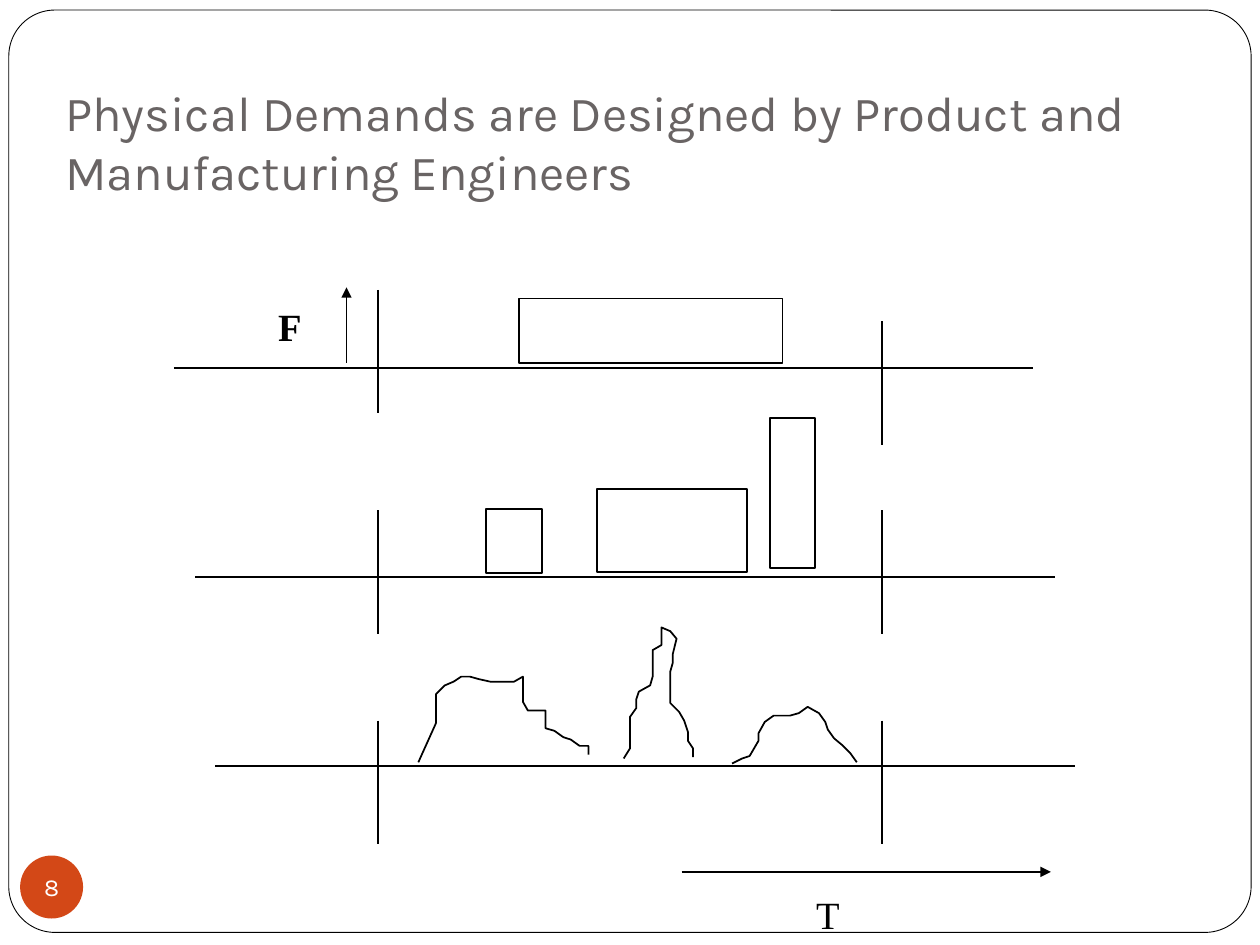
from lxml import etree
from pptx import Presentation
from pptx.dml.color import RGBColor
from pptx.enum.shapes import MSO_CONNECTOR, MSO_SHAPE
from pptx.enum.text import MSO_ANCHOR, PP_ALIGN
from pptx.oxml.ns import qn
from pptx.util import Pt

PX = 9144  # 100 px to the inch
LINE = MSO_CONNECTOR.STRAIGHT
RECT = MSO_SHAPE.RECTANGLE
ROUND = MSO_SHAPE.ROUNDED_RECTANGLE
OVAL = MSO_SHAPE.OVAL
TOP, MIDDLE, BOTTOM = MSO_ANCHOR.TOP, MSO_ANCHOR.MIDDLE, MSO_ANCHOR.BOTTOM
CENTER = PP_ALIGN.CENTER
BLACK, WHITE, GRAY, RUST = "000000", "FFFFFF", "696464", "D34817"


def rgb(code):
    return RGBColor.from_string(code)


def put_text(shape, text, size, font, color, anchor=TOP, bold=False):
    frame = shape.text_frame
    frame.word_wrap = True
    frame.vertical_anchor = anchor
    run = frame.paragraphs[0].add_run()
    run.text = text
    run.font.size = Pt(size)
    run.font.name = font
    run.font.bold = bold
    run.font.color.rgb = rgb(color)
    return frame


deck = Presentation()
deck.slide_width, deck.slide_height = 1000 * PX, 750 * PX
slide = deck.slides.add_slide(deck.slide_layouts[6])
shapes = slide.shapes

# Page frame
page = shapes.add_shape(ROUND, 7 * PX, 8 * PX, 986 * PX, 732 * PX)
page.adjustments[0] = 0.05
page.shadow.inherit = False
page.fill.solid()
page.fill.fore_color.rgb = rgb(WHITE)
page.line.color.rgb = rgb(BLACK)
page.line.width = Pt(0.5)

# Title
title = shapes.add_textbox(42 * PX, 50 * PX, 933 * PX, 114 * PX)
put_text(title, "Physical Demands are Designed by Product and "
         "Manufacturing Engineers", 28, "Karla", GRAY, BOTTOM)

# Base lines, cycle limits and the force and time arrows
lines = [(x, y, x + 682, y, False)
         for x, y in [(138, 292), (155, 458), (171, 608)]]
lines += [(x, y, x, y + 98, False)
          for x, y in [(300, 230), (700, 255), (300, 405),
                       (700, 405), (300, 572), (700, 572)]]
lines += [(275, 288, 275, 228, True), (541, 692, 834, 692, True)]
for x1, y1, x2, y2, arrow in lines:
    line = shapes.add_connector(LINE, x1 * PX, y1 * PX, x2 * PX, y2 * PX)
    line.line.color.rgb = rgb(BLACK)
    line.line.width = Pt(1)
    props = line._element.spPr
    if arrow:
        etree.SubElement(props.find(qn("a:ln")), qn("a:tailEnd"),
                         type="triangle")
    etree.SubElement(props, qn("a:effectLst"))

# Block demands
for x, y, w, h in [(412, 237, 209, 51), (611, 332, 36, 119),
                   (474, 388, 119, 66), (386, 404, 44, 51)]:
    block = shapes.add_shape(RECT, x * PX, y * PX, w * PX, h * PX)
    block.shadow.inherit = False
    block.fill.background()
    block.line.color.rgb = rgb(BLACK)
    block.line.width = Pt(1)

# Measured demand curves
curves = [
    [(332, 605), (346, 574), (346, 551), (353, 544), (360, 541), (366, 537),
     (373, 537), (380, 539), (389, 541), (408, 541), (415, 537), (415, 557),
     (419, 564), (433, 564), (433, 578), (440, 580), (447, 585), (453, 587),
     (460, 592), (467, 592), (467, 599)],
    [(495, 602), (500, 594), (500, 569), (505, 562), (505, 555), (507, 549),
     (516, 544), (518, 537), (518, 516), (525, 512), (525, 498), (532, 501),
     (537, 507), (534, 519), (534, 526), (532, 533), (532, 558), (539, 565),
     (543, 572), (546, 581), (546, 588), (550, 594), (550, 601)],
    [(581, 606), (589, 602), (595, 600), (602, 588), (602, 582), (607, 573),
     (614, 568), (627, 568), (634, 566), (641, 561), (650, 566), (655, 573),
     (657, 579), (662, 586), (668, 591), (675, 598), (680, 605)],
]
for dots in curves:
    pen = shapes.build_freeform(*dots[0], scale=PX)
    pen.add_line_segments(dots[1:], close=False)
    curve = pen.convert_to_shape()
    curve.shadow.inherit = False
    curve.fill.background()
    curve.line.color.rgb = rgb(BLACK)
    curve.line.width = Pt(1)

# Axis labels
for text, x, y, w, bold in [("F", 211, 236, 54, True),
                            ("T", 638, 702, 84, False)]:
    label = shapes.add_textbox(x * PX, y * PX, w * PX, 46 * PX)
    put_text(label, text, 22, "Times New Roman", BLACK, bold=bold)

# Page number
badge = shapes.add_shape(OVAL, 16 * PX, 679 * PX, 50 * PX, 50 * PX)
badge.shadow.inherit = False
badge.fill.solid()
badge.fill.fore_color.rgb = rgb(RUST)
badge.line.fill.background()
frame = put_text(badge, "8", 14, "Karla", WHITE, MIDDLE)
frame.word_wrap = False
frame.margin_left = frame.margin_right = 0
frame.margin_top = frame.margin_bottom = 0
frame.paragraphs[0].alignment = CENTER

deck.save("out.pptx")
